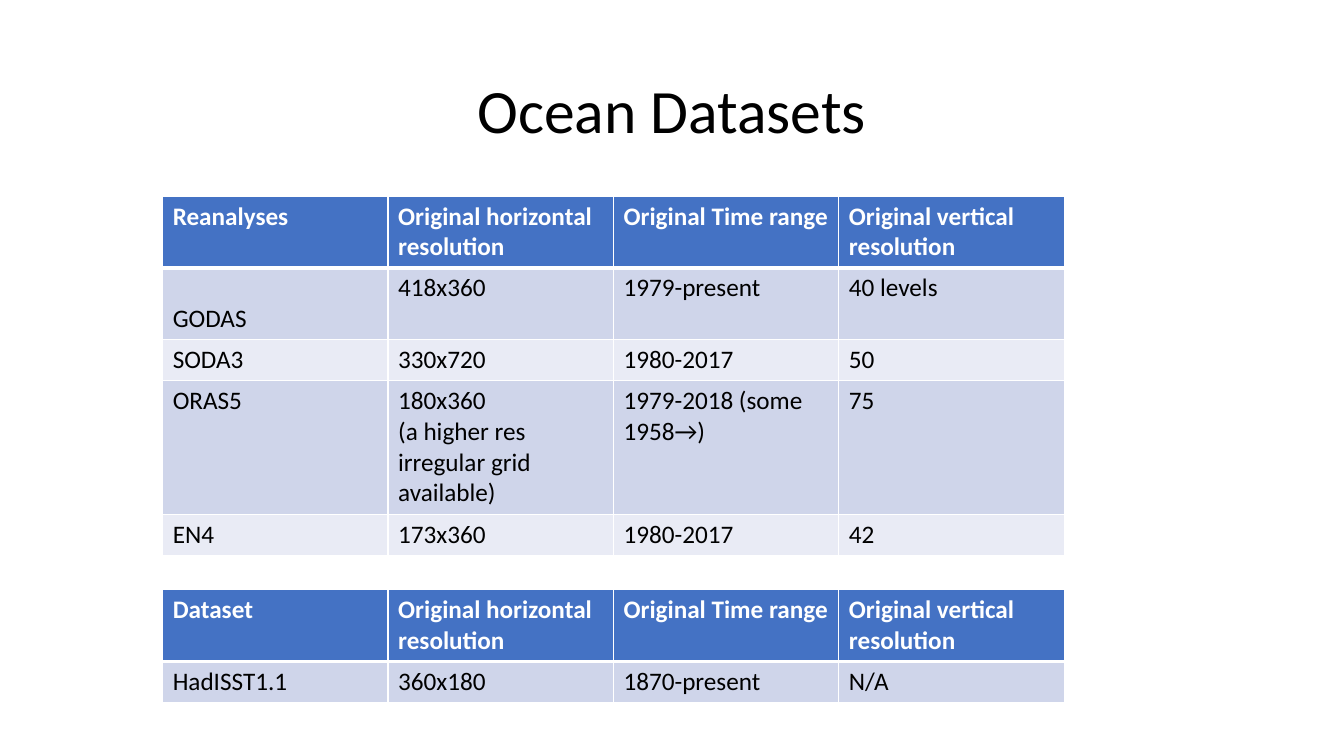
import pptx
import pptx.util
import pptx.dml.color
import pptx.enum.text
import pptx.oxml
import pptx.oxml.ns

Cm = pptx.util.Cm
Pt = pptx.util.Pt
RGBColor = pptx.dml.color.RGBColor
ALIGN = pptx.enum.text.PP_ALIGN
ANCHOR = pptx.enum.text.MSO_ANCHOR

WHITE = RGBColor(0xFF, 0xFF, 0xFF)
BLACK = RGBColor(0x00, 0x00, 0x00)
BLUE = RGBColor(0x44, 0x72, 0xC4)
BANDS = [RGBColor(0xCF, 0xD5, 0xEA), RGBColor(0xE9, 0xEB, 0xF5)]


def add_run(para, text, size, color, bold=False):
    run = para.add_run()
    run.text = text
    run.font.name = "Calibri"
    run.font.size = Pt(size)
    run.font.bold = bold
    run.font.color.rgb = color


def add_edge(cell, side, width):
    props = cell._tc.get_or_add_tcPr()
    props.append(pptx.oxml.parse_xml(
        f'<a:ln{side} {pptx.oxml.ns.nsdecls("a")} w="{Pt(width)}">'
        f'<a:solidFill><a:srgbClr val="{WHITE}"/></a:solidFill></a:ln{side}>'))


deck = pptx.Presentation()
deck.slide_width = Cm(33.87)
deck.slide_height = Cm(19.05)
slide = deck.slides.add_slide(deck.slide_layouts[5])
for mark in list(slide.placeholders):
    if mark != slide.shapes.title:
        mark.element.getparent().remove(mark.element)

title = slide.shapes.title
title.left, title.top = Cm(2.33), Cm(1.01)
title.width, title.height = Cm(29.21), Cm(3.68)
title.text_frame.vertical_anchor = ANCHOR.MIDDLE
para = title.text_frame.paragraphs[0]
para.alignment = ALIGN.CENTER
para.line_spacing = 0.9
add_run(para, "Ocean Datasets", 44, BLACK)

heads = ["Original horizontal resolution", "Original Time range",
         "Original vertical resolution"]
models = [
    ["Reanalyses"] + heads,
    ["GODAS", "418x360", "1979-present", "40 levels"],
    ["SODA3", "330x720", "1980-2017", "50"],
    ["ORAS5", "180x360\n(a higher res irregular grid available)",
     "1979-2018 (some 1958→)", "75"],
    ["EN4", "173x360", "1980-2017", "42"],
]
observed = [
    ["Dataset"] + heads,
    ["HadISST1.1", "360x180", "1870-present", "N/A"],
]

for top, rows, lines in [(4.94, models, [2, 2, 1, 4, 1]),
                         (14.86, observed, [2, 1])]:
    heights = [Cm(0.25 + 0.78 * count) for count in lines]
    table = slide.shapes.add_table(len(rows), 4, Cm(4.1), Cm(top),
                                   Cm(22.58), sum(heights)).table
    for col in table.columns:
        col.width = Cm(5.68)
    for r, texts in enumerate(rows):
        table.rows[r].height = heights[r]
        head = r == 0
        for c, text in enumerate(texts):
            cell = table.cell(r, c)
            for side in "LRTB":
                thick = (side, r) in [("B", 0), ("T", 1)]
                add_edge(cell, side, 3 if thick else 1)
            cell.fill.solid()
            cell.fill.fore_color.rgb = BLUE if head else BANDS[(r - 1) % 2]
            if text == "GODAS":
                cell.vertical_anchor = ANCHOR.BOTTOM
            frame = cell.text_frame
            for i, part in enumerate(text.split("\n")):
                para = frame.add_paragraph() if i else frame.paragraphs[0]
                add_run(para, part, 18, WHITE if head else BLACK, head)

deck.save("out.pptx")
